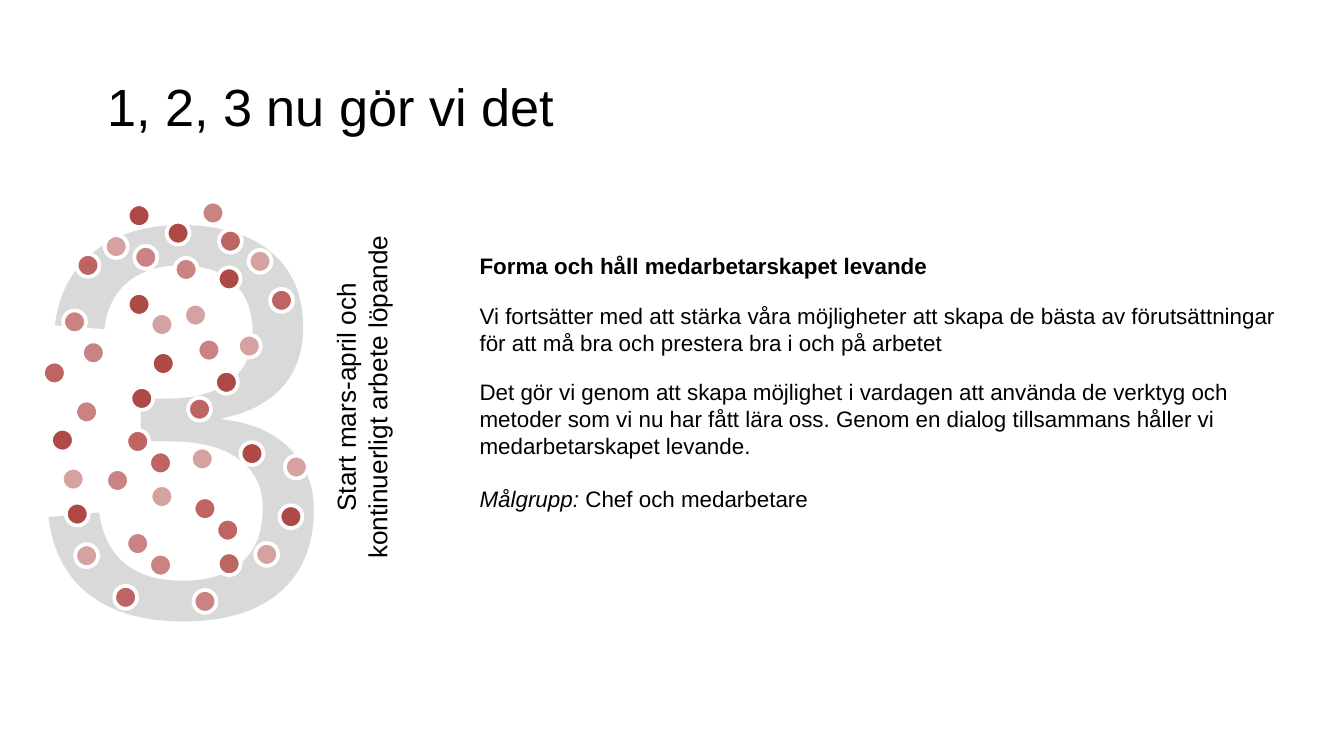
import itertools

import pptx
import pptx.dml.color
import pptx.enum.shapes
import pptx.enum.text
import pptx.util

COLORS = {
    "black": "000000", "white": "FFFFFF", "numeral": "D9D9D9",
    "red": "AE4946", "rose": "BE6462", "pink": "C98382", "blush": "D6A2A1",
}

# Widescreen slide, 16:9
deck = pptx.Presentation()
deck.slide_width = pptx.util.Inches(10)
deck.slide_height = deck.slide_width * 9 // 16
slide = deck.slides.add_slide(deck.slide_layouts[6])

# Grid of square cells: 100 columns by 56.25 rows
COL = deck.slide_width / 100
ROW = deck.slide_height / 56.25


def rgb(name):
    return pptx.dml.color.RGBColor.from_string(COLORS[name])


def write(text, box=None, paragraph=None, size=12, color="black", bold=False,
          italic=False, before=0, align="LEFT"):
    """Write text in a new box (column, row, columns, rows) or add it to a
    paragraph; return the paragraph."""
    if box:
        left, top, width, height = box
        frame = slide.shapes.add_textbox(
            int(left * COL), int(top * ROW), int(width * COL), int(height * ROW)).text_frame
        frame.word_wrap = True
        paragraph = frame.paragraphs[0]
    if before:
        paragraph.space_before = pptx.util.Pt(before)
    paragraph.alignment = pptx.enum.text.PP_ALIGN[align]
    run = paragraph.add_run()
    run.text = text
    run.font.name = "Arial"
    run.font.size = pptx.util.Pt(size)
    run.font.bold = bold
    run.font.italic = italic
    run.font.color.rgb = rgb(color)
    return paragraph


# Large numeral and title
write("3", box=(1.1, 3.7, 19.3, 51.5), size=300, color="numeral")
write("1, 2, 3 nu gör vi det", box=(7, 5, 70.6, 5), size=28)

# Description
write("Forma och håll medarbetarskapet levande",
      box=(34.7, 18.3, 63.1, 28.9), bold=True)
description = slide.shapes[-1].text_frame
for body in (
    "Vi fortsätter med att stärka våra möjligheter att skapa de bästa av "
    "förutsättningar för att må bra och prestera bra i och på arbetet",
    "Det gör vi genom att skapa möjlighet i vardagen att använda de verktyg och "
    "metoder som vi nu har fått lära oss. Genom en dialog tillsammans håller vi "
    "medarbetarskapet levande.",
):
    write(body, paragraph=description.add_paragraph(), before=12)
audience = write("Målgrupp: ", paragraph=description.add_paragraph(), italic=True, before=14)
write("Chef och medarbetare", paragraph=audience, before=14)

# Vertical schedule
write("Start mars-april och kontinuerligt arbete löpande",
      box=(13.2, 26.7, 27.4, 5.7), size=14, align="CENTER")
slide.shapes[-1].rotation = 270

# Dots scattered over the numeral, in four repeating shades: (column, row)
DOT = 1.7
dots = [
    (9.5, 15.2), (9.4, 32), (9.4, 39.6), (17.7, 24.9),
    (11.3, 26.2), (11.1, 33.6), (11.1, 41.2), (4.6, 34.8),
    (12.4, 16.5), (16.3, 17.1), (6.1, 25.4), (7.8, 17.5),
    (16, 27.6), (14.4, 37), (14.4, 43.9), (11.2, 36.1),
    (4.9, 37.4), (16.1, 38.6), (13, 19.2), (11.2, 23.3),
    (17.9, 32.9), (5.7, 18.9), (4.7, 23.1), (13.7, 22.6),
    (16.2, 19.9), (16.2, 41.1), (5.6, 29.8), (21.2, 33.9),
    (9.5, 21.8), (14, 29.6), (10, 18.3), (18.5, 18.6),
    (9.7, 28.8), (3.2, 26.9), (7.9, 34.9), (5.6, 40.5),
    (20.8, 37.6), (20.1, 21.5), (15, 15), (14.2, 33.3),
    (3.8, 31.9), (8.5, 43.6), (14.7, 25.2), (19, 40.4),
]
shades = itertools.cycle(["red", "rose", "pink", "blush"])
for (column, row), shade in zip(dots, shades):
    dot = slide.shapes.add_shape(
        pptx.enum.shapes.MSO_SHAPE.OVAL,
        int(column * COL), int(row * ROW), int(DOT * COL), int(DOT * ROW))
    dot.shadow.inherit = False
    dot.fill.solid()
    dot.fill.fore_color.rgb = rgb(shade)
    dot.line.color.rgb = rgb("white")
    dot.line.width = pptx.util.Pt(2)

deck.save("out.pptx")
